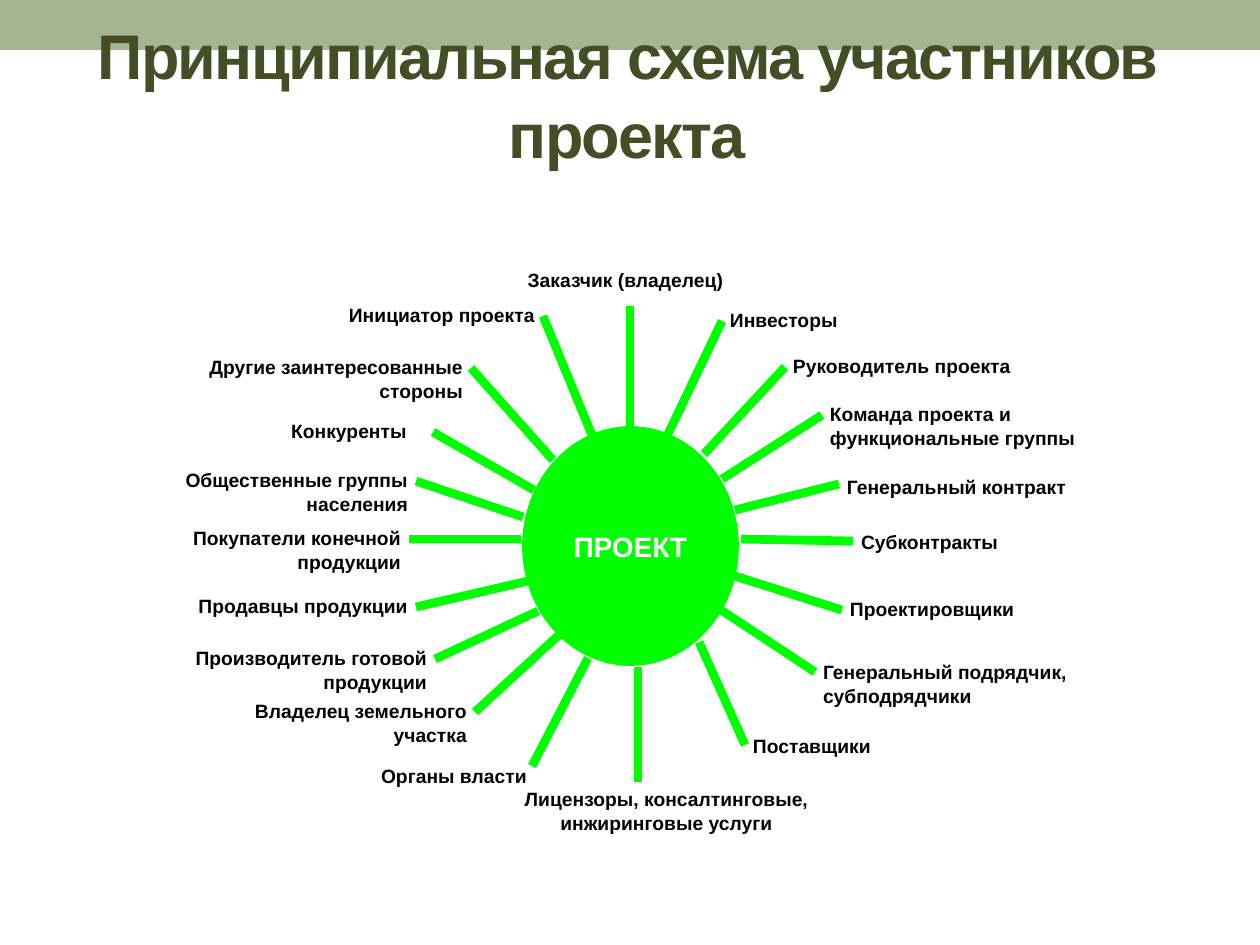
"""Build a slide with a radial diagram of project participants."""
from dataclasses import dataclass

from lxml import etree
from pptx import Presentation
from pptx import util as u
from pptx.dml.color import RGBColor
from pptx.enum import shapes, text
from pptx.oxml import ns

SCALE = 914400 / 126
COLORS = {"bar": "A5B592", "title": "444D26", "green": "00FF00",
          "black": "000000", "white": "FFFFFF"}
LEFT, CENTER, RIGHT = text.PP_ALIGN.LEFT, text.PP_ALIGN.CENTER, text.PP_ALIGN.RIGHT
TOP, MIDDLE, BOTTOM = text.MSO_ANCHOR.TOP, text.MSO_ANCHOR.MIDDLE, text.MSO_ANCHOR.BOTTOM
SPOKE_WIDTH = u.Pt(5)
SPOKE_GAP, SPOKE_DROP = 8, 14


@dataclass(frozen=True)
class Callout:
    words: str
    box: tuple[int, int, int, int]
    hub_end: tuple[int, int]
    align: text.PP_ALIGN = LEFT
    anchor: text.MSO_ANCHOR = TOP


@dataclass(frozen=True)
class Label:
    words: str
    box: tuple[int, int, int, int]
    spoke: tuple[int, int, int, int]
    anchor: text.MSO_ANCHOR = MIDDLE


CALLOUTS = [
    Callout("Инвесторы", (730, 307, 152, 37), (668, 434)),
    Callout("Руководитель проекта", (793, 353, 224, 25), (704, 454)),
    Callout("Команда проекта и функциональные группы", (830, 401, 276, 42), (722, 479)),
    Callout("Генеральный контракт", (847, 470, 224, 32), (735, 510), anchor=MIDDLE),
    Callout("Субконтракты", (861, 527, 180, 29), (741, 539), anchor=MIDDLE),
    Callout("Проектировщики", (850, 596, 190, 33), (735, 576)),
    Callout("Генеральный подрядчик, субподрядчики", (823, 658, 306, 50), (721, 610),
            anchor=MIDDLE),
    Callout("Инициатор проекта", (309, 302, 226, 18), (592, 435), RIGHT),
    Callout("Другие заинтересованные стороны", (190, 354, 273, 43), (553, 460), RIGHT),
    Callout("Конкуренты", (273, 418, 152, 30), (534, 490), CENTER),
    Callout("Общественные группы населения", (180, 467, 228, 44), (523, 517), RIGHT),
    Callout("Покупатели конечной продукции", (158, 525, 243, 54), (521, 539), RIGHT),
    Callout("Продавцы продукции", (166, 593, 242, 29), (528, 581), RIGHT),
    Callout("Производитель готовой продукции", (131, 645, 296, 45), (538, 611), RIGHT),
    Callout("Владелец земельного участка", (213, 698, 254, 100), (560, 634), RIGHT),
    Callout("Поставщики", (753, 731, 152, 28), (699, 642), anchor=MIDDLE),
]
LABELS = [
    Label("Заказчик (владелец)", (524, 252, 203, 54), (630, 306, 630, 427)),
    Label("Лицензоры, консалтинговые, инжиринговые услуги", (524, 775, 285, 71),
          (638, 667, 638, 782)),
    Label("Органы власти", (378, 757, 152, 30), (588, 658, 532, 766), BOTTOM),
]


def px(*lengths: int) -> list[u.Emu]:
    return [u.Emu(round(length * SCALE)) for length in lengths]


def rgb(name: str) -> RGBColor:
    return RGBColor.from_string(COLORS[name])


def write(shape, words: str, size: int, color: str, align, anchor) -> None:
    frame = shape.text_frame
    frame.text = words
    frame.word_wrap = True
    frame.auto_size = text.MSO_AUTO_SIZE.NONE
    frame.vertical_anchor = anchor
    frame.margin_left = frame.margin_right = frame.margin_top = frame.margin_bottom = 0
    para = frame.paragraphs[0]
    para.alignment = align
    para.line_spacing = 1.05
    span = para.runs[0]
    span.font.name = "Arial"
    span.font.size = u.Pt(size)
    span.font.bold = True
    span.font.color.rgb = rgb(color)


def write_label(shape, words: str, align, anchor) -> None:
    write(shape, words, 11, "black", align, anchor)
    shape.text_frame.paragraphs[0].space_after = u.Pt(4.8)


def draw_bar(page) -> None:
    bar = page.shapes.add_shape(shapes.MSO_SHAPE.RECTANGLE, *px(0, 0, 1260, 50))
    bar.shadow.inherit = False
    bar.fill.solid()
    bar.fill.fore_color.rgb = rgb("bar")
    bar.line.fill.background()
    page.shapes._spTree.insert(2, bar._element)


def draw_title(page) -> None:
    title = page.shapes.title
    title.left, title.top, title.width, title.height = px(63, 53, 1129, 78)
    write(title, "Принципиальная схема участников проекта", 36, "title", CENTER, MIDDLE)
    title.text_frame.paragraphs[0].runs[0].font._element.set("spc", "-100")


def draw_hub(group) -> None:
    hub = group.shapes.add_shape(shapes.MSO_SHAPE.OVAL, *px(523, 427, 215, 238))
    hub.shadow.inherit = False
    hub.fill.solid()
    hub.fill.fore_color.rgb = rgb("green")
    hub.line.color.rgb = rgb("green")
    hub.line.width = u.Pt(1)
    write(hub, "ПРОЕКТ", 16, "white", CENTER, MIDDLE)


def draw_callout(group, item: Callout) -> None:
    left, top, width, height = item.box
    hub_x, hub_y = item.hub_end
    start_x = left - SPOKE_GAP if hub_x < left else left + width + SPOKE_GAP
    callout = group.shapes.add_shape(shapes.MSO_SHAPE.LINE_CALLOUT_1_NO_BORDER, *px(*item.box))
    for index, value in enumerate((SPOKE_DROP / height, (start_x - left) / width,
                                   (hub_y - top) / height, (hub_x - left) / width)):
        callout.adjustments[index] = value
    callout.shadow.inherit = False
    callout.fill.background()
    callout.line.color.rgb = rgb("green")
    callout.line.width = SPOKE_WIDTH
    write_label(callout, item.words, item.align, item.anchor)


def draw_label(group, item: Label) -> None:
    box = group.shapes.add_textbox(*px(*item.box))
    write_label(box, item.words, CENTER, item.anchor)
    spoke = group.shapes.add_connector(shapes.MSO_CONNECTOR.STRAIGHT, *px(*item.spoke))
    spoke.line.color.rgb = rgb("green")
    spoke.line.width = SPOKE_WIDTH
    etree.SubElement(spoke._element.spPr, ns.qn("a:effectLst"))


def main() -> None:
    deck = Presentation()
    deck.slide_width, deck.slide_height = px(1260, 945)
    page = deck.slides.add_slide(deck.slide_layouts[5])
    draw_bar(page)
    draw_title(page)
    diagram = page.shapes.add_group_shape()
    draw_hub(diagram)
    for callout in CALLOUTS:
        draw_callout(diagram, callout)
    for label in LABELS:
        draw_label(diagram, label)
    deck.save("out.pptx")


if __name__ == "__main__":
    main()
